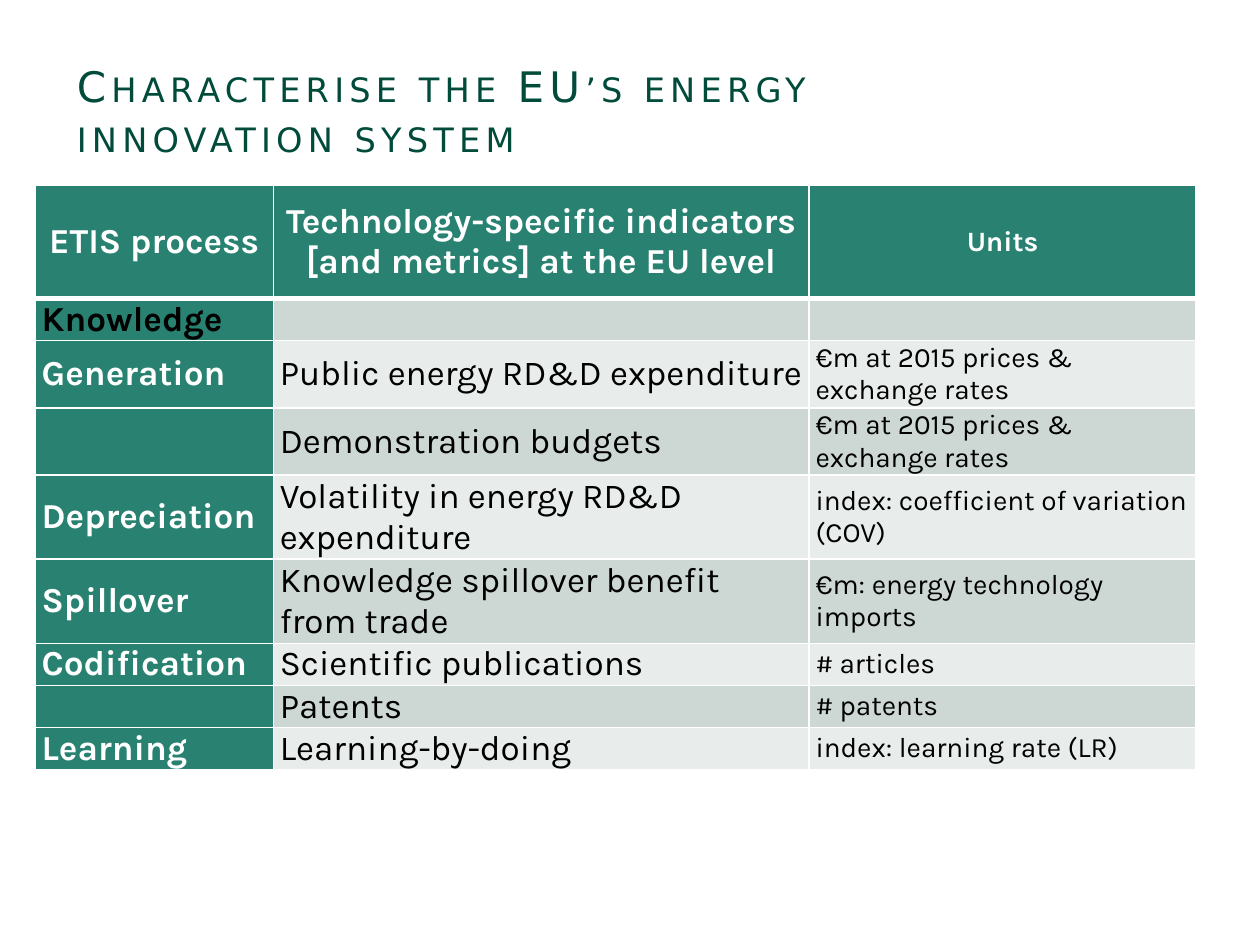
from lxml import etree
from pptx import Presentation
from pptx.dml.color import RGBColor
from pptx.enum.text import MSO_ANCHOR, PP_ALIGN
from pptx.oxml.ns import qn
from pptx.util import Cm, Pt

MIDDLE = MSO_ANCHOR.MIDDLE
LEFT, CENTER = PP_ALIGN.LEFT, PP_ALIGN.CENTER
COLORS = {"title": "014B3B", "green": "298271", "dark_band": "CDD8D5",
          "light_band": "E8EDEB", "white": "FFFFFF", "black": "000000"}
COL_WIDTHS = (4.8, 10.8, 7.8)
HEADER_HEIGHT, ROW_HEIGHT = 2.29, 0.66
SIZES = (20, 20, 16)
HEADER = ("ETIS process",
          "Technology-specific indicators [and metrics] at the EU level",
          "Units")
ROWS = (
    ("Knowledge", "", ""),
    ("Generation", "Public energy RD&D expenditure", "€m at 2015 prices & exchange rates"),
    ("", "Demonstration budgets", "€m at 2015 prices & exchange rates"),
    ("Depreciation", "Volatility in energy RD&D expenditure",
     "index: coefficient of variation (COV)"),
    ("Spillover", "Knowledge spillover benefit from trade", "€m: energy technology imports"),
    ("Codification", "Scientific publications", "# articles"),
    ("", "Patents", "# patents"),
    ("Learning", "Learning-by-doing", "index: learning rate (LR)"),
)


def rgb(name):
    """Return the named palette colour."""
    return RGBColor.from_string(COLORS[name])


def write(tf, text, size=20, color="black", bold=False, align=LEFT, font="Karla"):
    """Write formatted text in the first paragraph and return its run."""
    p = tf.paragraphs[0]
    p.alignment = align
    r = p.add_run()
    r.text = text
    r.font.name = font
    r.font.size = Pt(size)
    r.font.bold = bold
    r.font.color.rgb = rgb(color)
    return r


def add_title(s, text):
    """Add the letter-spaced small-caps title."""
    tf = s.shapes.add_textbox(Cm(1.3), Cm(0.53), Cm(17.6), Cm(3.4)).text_frame
    tf.word_wrap = True
    tf.vertical_anchor = MIDDLE
    r = write(tf, text, size=24, color="title", font="DejaVu Sans")
    props = r.font._element
    props.set("cap", "small")
    props.set("spc", "300")


def set_borders(cell, bottom=1, top=1):
    """Draw white borders with the given widths in points."""
    props = cell._tc.get_or_add_tcPr()
    widths = (("a:lnL", 1), ("a:lnR", 1), ("a:lnT", top), ("a:lnB", bottom))
    for i, (tag, width) in enumerate(widths):
        ln = etree.Element(qn(tag), w=str(Pt(width)))
        fill = etree.SubElement(ln, qn("a:solidFill"))
        etree.SubElement(fill, qn("a:srgbClr"), val=COLORS["white"])
        props.insert(i, ln)


def fill_cell(cell, text, fill, bottom=1, top=1, **fmt):
    """Set the margins, fill, borders and text of a cell."""
    cell.margin_left = cell.margin_right = Cm(0.13)
    cell.margin_top = cell.margin_bottom = 0
    cell.vertical_anchor = MIDDLE
    cell.fill.solid()
    cell.fill.fore_color.rgb = rgb(fill)
    set_borders(cell, bottom, top)
    if text:
        write(cell.text_frame, text, **fmt)


def add_indicator_table(s):
    """Add the table of innovation processes, indicators and units."""
    height = HEADER_HEIGHT + ROW_HEIGHT * len(ROWS)
    table = s.shapes.add_table(len(ROWS) + 1, len(HEADER), Cm(0.71), Cm(3.73),
                               Cm(sum(COL_WIDTHS)), Cm(height)).table
    for column, width in zip(table.columns, COL_WIDTHS):
        column.width = Cm(width)
    for i, row in enumerate(table.rows):
        row.height = Cm(ROW_HEIGHT if i else HEADER_HEIGHT)
    for j, (text, size) in enumerate(zip(HEADER, SIZES)):
        fill_cell(table.cell(0, j), text, "green", bottom=3,
                  size=size, color="white", bold=True, align=CENTER)
    for i, row in enumerate(ROWS, 1):
        band = "dark_band" if i % 2 else "light_band"
        for j, (text, size) in enumerate(zip(row, SIZES)):
            process = j == 0
            fill_cell(table.cell(i, j), text, "green" if process else band,
                      top=3 if i == 1 else 1, size=size, bold=process,
                      color="white" if process and i > 1 else "black")


def main():
    """Build and save the slide."""
    prs = Presentation()
    prs.slide_width, prs.slide_height = Cm(25.4), Cm(19.05)
    s = prs.slides.add_slide(prs.slide_layouts[6])
    add_title(s, "Characterise the EU’s energy innovation system")
    add_indicator_table(s)
    prs.save("out.pptx")


if __name__ == "__main__":
    main()
